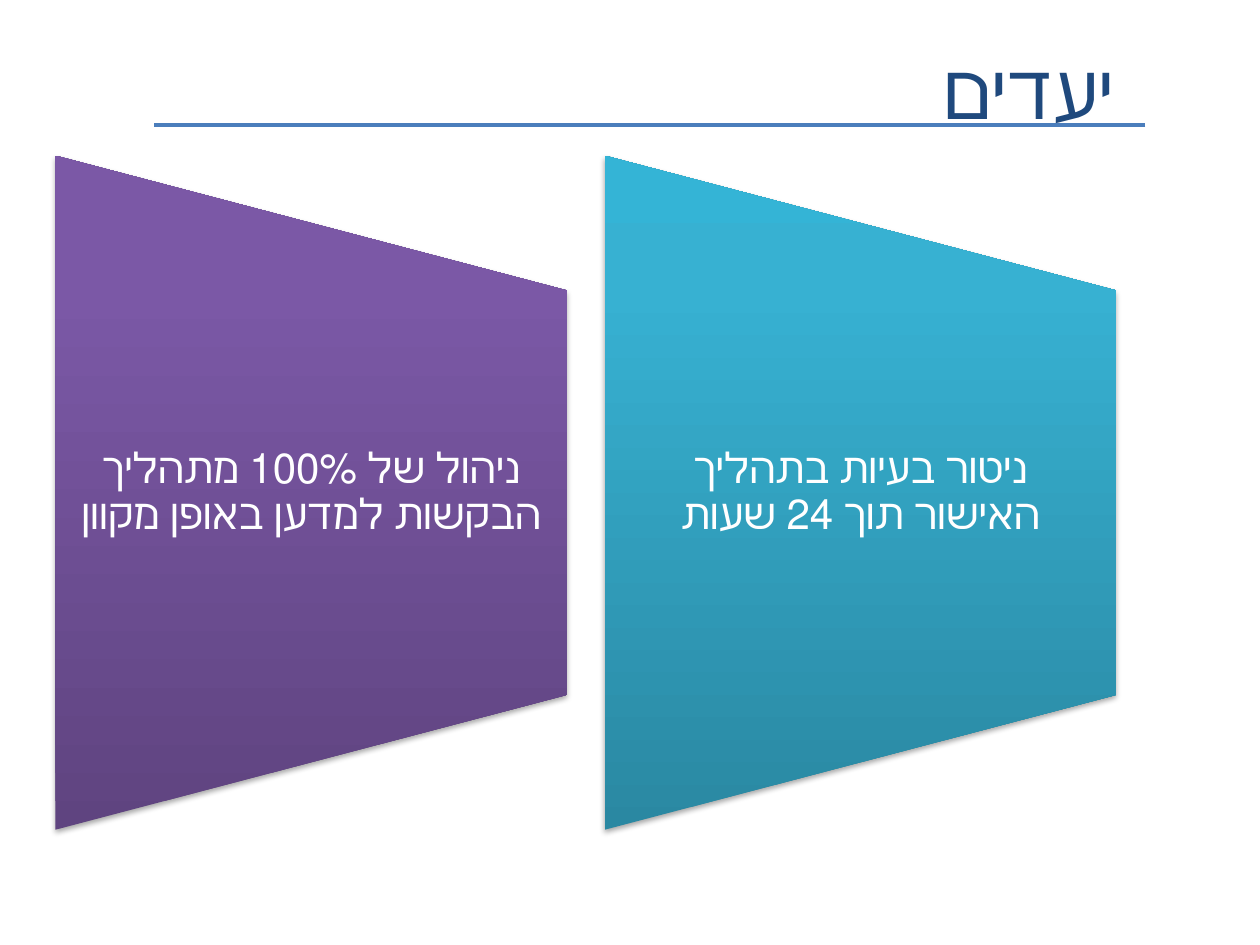
from dataclasses import dataclass

from pptx import Presentation
from pptx.dml.color import RGBColor
from pptx.enum.shapes import MSO_CONNECTOR, MSO_SHAPE
from pptx.enum.text import MSO_ANCHOR, MSO_AUTO_SIZE, PP_ALIGN
from pptx.oxml import parse_xml
from pptx.oxml.ns import nsdecls
from pptx.util import Inches, Pt

TRAPEZE = MSO_SHAPE.FLOWCHART_MANUAL_OPERATION
STRAIGHT = MSO_CONNECTOR.STRAIGHT
TOP, MIDDLE = MSO_ANCHOR.TOP, MSO_ANCHOR.MIDDLE
RIGHT, CENTER = PP_ALIGN.RIGHT, PP_ALIGN.CENTER
NO_FIT = MSO_AUTO_SIZE.NONE

FONT = "Calibri"
COLORS = {"title": "1F497D", "rule": "4B7EBC", "text": "FFFFFF", "shade": "000000"}
STOPS = (0, 80, 100)
LONG, SHORT = 5.35, 4.06
TEXT_H = 3.21
LEFT, MID, PITCH = 0.44, 3.91, 4.36


@dataclass
class Panel:
    text: str
    grad: tuple[str, str, str]


PANELS = [
    Panel("ניהול של 100% מתהליך הבקשות למדען באופן מקוון", ("5F4480", "7B58A6", "7C57A8")),
    Panel("ניטור בעיות בתהליך האישור תוך 24 שעות", ("2A88A2", "37B1D2", "34B4D6")),
]


def style(par, size: int, color: str, align) -> None:
    par.alignment = align
    par.font.name = FONT
    par.font.size = Pt(size)
    par.font.color.rgb = RGBColor.from_string(COLORS[color])
    par._p.get_or_add_pPr().set("rtl", "1")


def add_title(slide, text: str) -> None:
    title = slide.shapes.title
    title.left, title.top = Inches(1.54), Inches(0.29)
    title.width, title.height = Inches(7.4), Inches(0.84)
    frame = title.text_frame
    frame.text = text
    frame.auto_size = NO_FIT
    frame.vertical_anchor = TOP
    style(frame.paragraphs[0], 44, "title", RIGHT)


def add_rule(slide) -> None:
    rule = slide.shapes.add_connector(
        STRAIGHT, Inches(9.09), Inches(0.99), Inches(1.22), Inches(0.99))
    rule.line.color.rgb = RGBColor.from_string(COLORS["rule"])
    rule.line.width = Pt(2.5)
    rule._element.spPr.append(parse_xml(f'<a:effectLst {nsdecls("a")}/>'))


def add_panel(slide, panel: Panel, left: float) -> None:
    shape = slide.shapes.add_shape(
        TRAPEZE, Inches(left + (SHORT - LONG) / 2), Inches(MID - SHORT / 2),
        Inches(LONG), Inches(SHORT))
    shape.rotation = 270
    stops = "".join(
        f'<a:gs pos="{pos * 1000}"><a:srgbClr val="{color}"/></a:gs>'
        for pos, color in zip(STOPS, panel.grad))
    props = shape._element.spPr
    props.append(parse_xml(
        f'<a:gradFill {nsdecls("a")} rotWithShape="0"><a:gsLst>{stops}</a:gsLst>'
        '<a:lin ang="16200000" scaled="0"/></a:gradFill>'))
    shape.line.fill.background()
    props.append(parse_xml(
        f'<a:effectLst {nsdecls("a")}><a:outerShdw blurRad="{Pt(3.1)}" '
        f'dist="{Pt(1.8)}" dir="5400000" rotWithShape="0">'
        f'<a:srgbClr val="{COLORS["shade"]}"><a:alpha val="35000"/></a:srgbClr>'
        '</a:outerShdw></a:effectLst>'))

    box = slide.shapes.add_textbox(
        Inches(left), Inches(MID - TEXT_H / 2), Inches(SHORT), Inches(TEXT_H))
    frame = box.text_frame
    frame.word_wrap = True
    frame.vertical_anchor = MIDDLE
    frame.margin_left = frame.margin_right = Inches(0.17)
    frame.margin_top = frame.margin_bottom = 0
    frame.text = panel.text
    par = frame.paragraphs[0]
    par.line_spacing = 0.9
    style(par, 24, "text", CENTER)


def main() -> None:
    deck = Presentation()
    deck.slide_width, deck.slide_height = Inches(10), Inches(7.5)
    slide = deck.slides.add_slide(deck.slide_layouts[5])
    add_rule(slide)
    add_title(slide, "יעדים")
    for i, panel in enumerate(PANELS):
        add_panel(slide, panel, LEFT + i * PITCH)
    deck.save("out.pptx")


if __name__ == "__main__":
    main()
